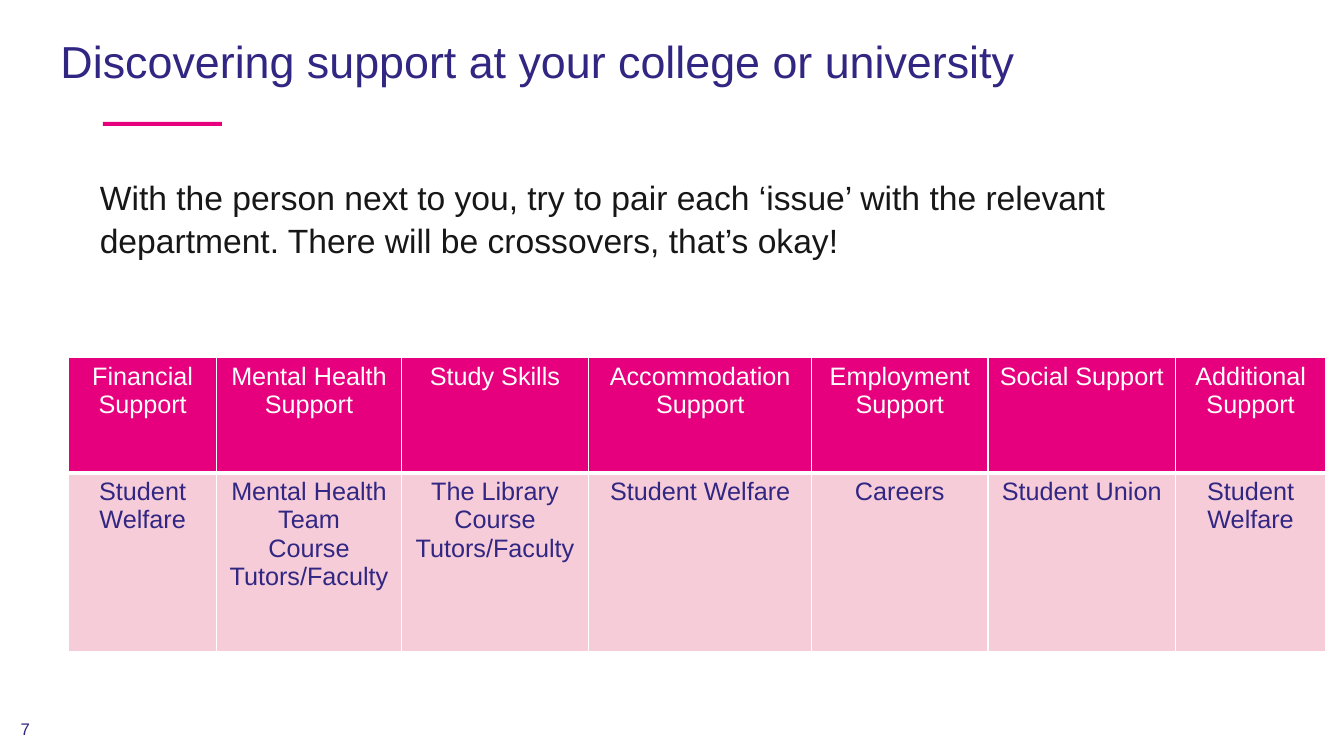
from dataclasses import dataclass

from lxml.etree import SubElement
from pptx import Presentation
from pptx.dml.color import RGBColor
from pptx.enum.shapes import MSO_SHAPE
from pptx.enum.text import MSO_ANCHOR, MSO_AUTO_SIZE, PP_ALIGN
from pptx.oxml import parse_xml
from pptx.oxml.ns import nsdecls, qn
from pptx.util import Inches, Pt


@dataclass(frozen=True)
class Theme:
    font: str = "Arial"
    pink: str = "E6007E"
    pale: str = "F5CCD8"
    navy: str = "312783"
    ink: str = "181717"
    white: str = "FFFFFF"
    title: int = 32
    body: int = 24
    table: int = 18
    number: int = 12


theme = Theme()


def format_text(tf, size, color, **paragraph_format):
    """Apply one font and paragraph format to every paragraph."""
    for p in tf.paragraphs:
        for name, value in paragraph_format.items():
            setattr(p, name, value)
        for r in p.runs:
            font = {"name": theme.font, "size": Pt(size), "bold": False}
            for name, value in font.items():
                setattr(r.font, name, value)
            r.font.color.rgb = RGBColor.from_string(color)


def set_borders(cell, widths):
    """Draw white borders; widths are points for L, R, T and B."""
    tcPr = cell._tc.get_or_add_tcPr()
    for i, (side, width) in enumerate(widths.items()):
        tcPr.insert(i, parse_xml(
            f'<a:ln{side} {nsdecls("a")} w="{Pt(width)}"><a:solidFill>'
            f'<a:srgbClr val="{theme.white}"/></a:solidFill></a:ln{side}>'))


prs = Presentation()
prs.slide_width, prs.slide_height = Inches(13.33), Inches(7.5)
s = prs.slides.add_slide(prs.slide_layouts[1])

# Title and instruction placeholders
title, body = s.shapes.title, s.placeholders[1]
for sp, box, anchor, text in [
    (title, (0.5, 0.22, 11.56, 0.71), MSO_ANCHOR.BOTTOM,
     "Discovering support at your college or university"),
    (body, (0.89, 1.68, 11.56, 5.31), MSO_ANCHOR.TOP,
     "With the person next to you, try to pair each ‘issue’ with the relevant "
     "department. There will be crossovers, that’s okay!"),
]:
    sp.left, sp.top, sp.width, sp.height = map(Inches, box)
    tf = sp.text_frame
    tf.text = text
    tf.word_wrap = True
    tf.auto_size = MSO_AUTO_SIZE.NONE
    tf.vertical_anchor = anchor

pPr = body.text_frame.paragraphs[0]._p.get_or_add_pPr()
pPr.set("marL", "0")
pPr.set("indent", "0")
SubElement(pPr, qn("a:buNone"))
format_text(title.text_frame, theme.title, theme.navy,
            alignment=PP_ALIGN.LEFT, line_spacing=0.9)
format_text(body.text_frame, theme.body, theme.ink,
            alignment=PP_ALIGN.LEFT, line_spacing=1.07, space_before=Pt(0))

# Accent bar under the title
bar = s.shapes.add_shape(MSO_SHAPE.RECTANGLE, Inches(1.02), Inches(1.21),
                         Inches(1.18), Inches(0.04))
bar.shadow.inherit = False
bar.fill.solid()
bar.fill.fore_color.rgb = RGBColor.from_string(theme.pink)
bar.line.fill.background()

# Slide number
number = s.shapes.add_textbox(Inches(0), Inches(7.06), Inches(0.5), Inches(0.35))
tf = number.text_frame
tf.text = "7"
tf.word_wrap = True
tf.vertical_anchor = MSO_ANCHOR.MIDDLE
format_text(tf, theme.number, theme.navy, alignment=PP_ALIGN.CENTER)

# Support table: heading, departments, column width
columns = [
    ("Financial Support", "Student Welfare", 1.47),
    ("Mental Health Support", "Mental Health Team\nCourse Tutors/Faculty", 1.83),
    ("Study Skills", "The Library\nCourse Tutors/Faculty", 1.86),
    ("Accommodation Support", "Student Welfare", 2.21),
    ("Employment Support", "Careers", 1.75),
    ("Social Support", "Student Union", 1.86),
    ("Additional Support", "Student Welfare", 1.49),
]
row_styles = [
    (1.14, theme.pink, theme.white, {"L": 1, "R": 1, "T": 1, "B": 3}),
    (1.77, theme.pale, theme.navy, {"L": 1, "R": 1, "T": 3, "B": 1}),
]
table = s.shapes.add_table(len(row_styles), len(columns), Inches(0.68),
                           Inches(3.55), Inches(12.46), Inches(2.91)).table
for col, (*texts, width) in enumerate(columns):
    table.columns[col].width = Inches(width)
    for row, (height, fill, color, borders) in enumerate(row_styles):
        table.rows[row].height = Inches(height)
        cell = table.cell(row, col)
        cell.text = texts[row]
        cell.fill.solid()
        cell.fill.fore_color.rgb = RGBColor.from_string(fill)
        set_borders(cell, borders)
        format_text(cell.text_frame, theme.table, color,
                    alignment=PP_ALIGN.CENTER)

prs.save("out.pptx")
